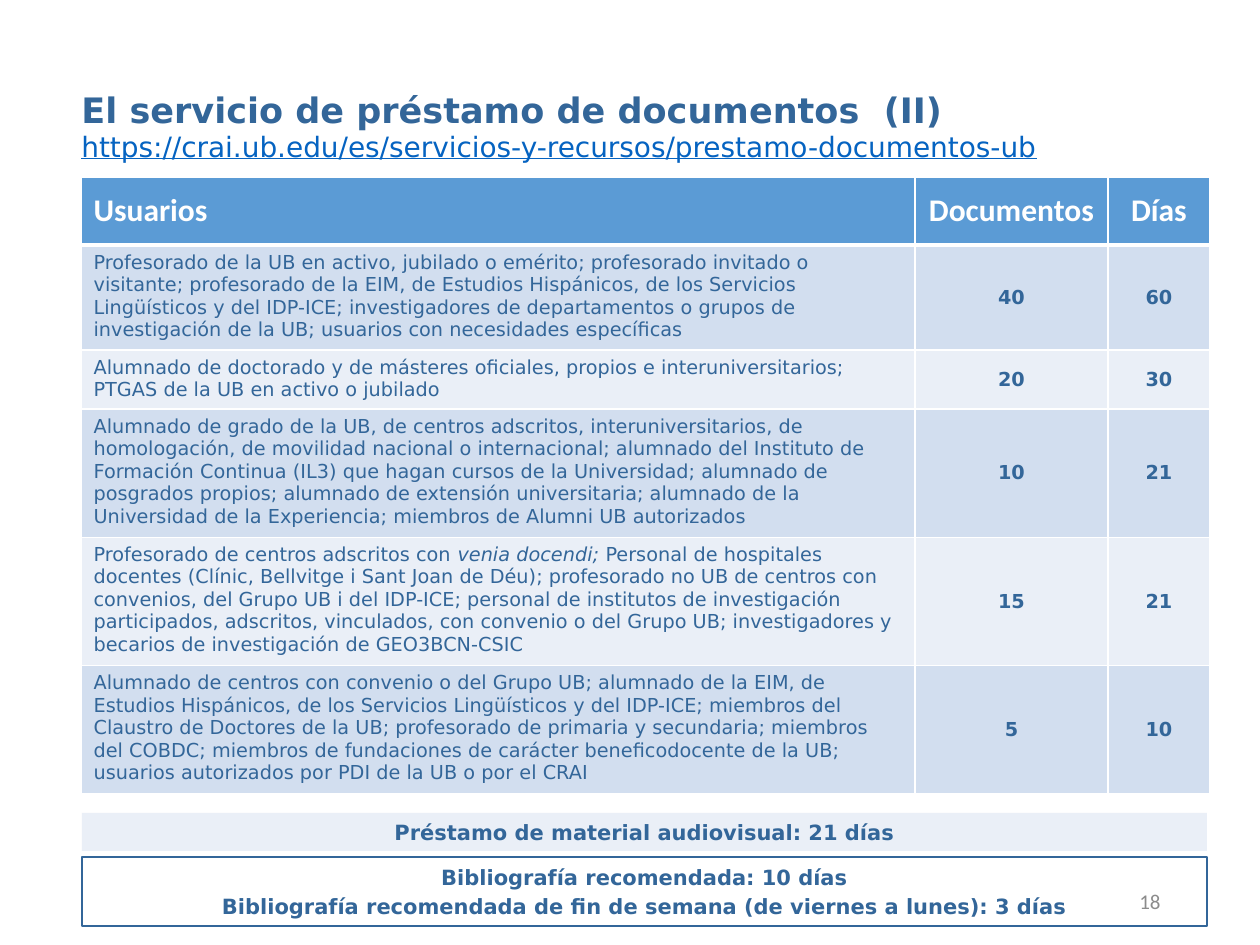
"""Build the slide on document loan periods for each group of library users."""
import lxml.etree
import pptx
import pptx.dml.color
import pptx.enum.shapes
import pptx.enum.text
import pptx.oxml
import pptx.oxml.ns
import pptx.util

PX = 914400 / 126
ALIGN = pptx.enum.text.PP_ALIGN
MIDDLE = pptx.enum.text.MSO_ANCHOR.MIDDLE
TOP = pptx.enum.text.MSO_ANCHOR.TOP
THEME = {
    "body_font": "DejaVu Sans", "table_head_font": "Calibri",
    "blue": "336699", "link": "0563C1", "gray": "8C8C8C", "white": "FFFFFF",
    "head": "5B9BD5", "bands": ("D2DEEF", "EAEFF7"), "notice": "EAEFF7",
    "title_pt": 20, "link_pt": 16, "head_pt": 18, "cell_pt": 11, "notice_pt": 12, "number_pt": 12,
}


def px(*lengths):
    return [pptx.util.Emu(round(length * PX)) for length in lengths]


def write(paragraph, text, size, color="blue", font="body_font", bold=False, align=ALIGN.LEFT):
    paragraph.alignment = align
    run = paragraph.add_run()
    run.text = text
    run.font.name = THEME[font]
    run.font.size = pptx.util.Pt(THEME[size])
    run.font.bold = bold
    run.font.color.rgb = pptx.dml.color.RGBColor.from_string(THEME[color])
    return run


deck = pptx.Presentation()
deck.slide_width, deck.slide_height = px(1260, 945)
slide = deck.slides.add_slide(deck.slide_layouts[6])

page_number = slide.shapes.add_textbox(*px(890, 876, 283, 50)).text_frame
page_number.word_wrap = True
page_number.vertical_anchor = MIDDLE
write(page_number.paragraphs[0], "18", "number_pt", "gray", "table_head_font", align=ALIGN.RIGHT)

title = slide.shapes.add_textbox(*px(69, 87, 926, 50)).text_frame
title.word_wrap = True
title.vertical_anchor = MIDDLE
title.paragraphs[0].line_spacing = 0.9
write(title.paragraphs[0], "El servicio de préstamo de documentos  (II)", "title_pt", bold=True)

address = slide.shapes.add_textbox(*px(69, 123, 1019, 81)).text_frame
address.word_wrap = False
write(address.paragraphs[0], "https://crai.ub.edu/es/servicios-y-recursos/prestamo-documentos-ub",
      "link_pt", "link").font.underline = True

headings = ("Usuarios", "Documentos", "Días")
loans = [
    (["Profesorado de la UB en activo, jubilado o emérito; profesorado invitado o visitante; "
      "profesorado de la EIM, de Estudios Hispánicos, de los Servicios Lingüísticos y del IDP-ICE; "
      "investigadores de departamentos o grupos de investigación de la UB; "
      "usuarios con necesidades específicas"], "40", "60"),
    (["Alumnado de doctorado y de másteres oficiales, propios e interuniversitarios; "
      "PTGAS de la UB en activo o jubilado"], "20", "30"),
    (["Alumnado de grado de la UB, de centros adscritos, interuniversitarios, de homologación, "
      "de movilidad nacional o internacional; alumnado del Instituto de Formación Continua (IL3) "
      "que hagan cursos de la Universidad; alumnado de posgrados propios; alumnado de extensión "
      "universitaria; alumnado de la Universidad de la Experiencia; "
      "miembros de Alumni UB autorizados"], "10", "21"),
    (["Profesorado de centros adscritos con ", "venia docendi; ",
      "Personal de hospitales docentes (Clínic, Bellvitge i Sant Joan de Déu); profesorado no UB "
      "de centros con convenios, del Grupo UB i del IDP-ICE; personal de institutos de "
      "investigación participados, adscritos, vinculados, con convenio o del Grupo UB; "
      "investigadores y becarios de investigación de GEO3BCN-CSIC"], "15", "21"),
    (["Alumnado de centros con convenio o del Grupo UB; alumnado de la EIM, de Estudios "
      "Hispánicos, de los Servicios Lingüísticos y del IDP-ICE; miembros del Claustro de Doctores "
      "de la UB; profesorado de primaria y secundaria; miembros del COBDC; miembros de fundaciones "
      "de carácter beneficodocente de la UB; usuarios autorizados por PDI de la UB o por el CRAI"],
     "5", "10"),
]
column_widths = px(834, 193, 102)
row_heights = px(68, 105, 59, 128, 128, 128)
loan_table = slide.shapes.add_table(len(row_heights), len(column_widths), *px(81, 177, 1129, 616)).table
for column, width in zip(loan_table.columns, column_widths):
    column.width = width
for row, height in zip(loan_table.rows, row_heights):
    row.height = height

for column_index, heading in enumerate(headings):
    write(loan_table.cell(0, column_index).text_frame.paragraphs[0], heading, "head_pt", "white",
          "table_head_font", True, ALIGN.CENTER if column_index else ALIGN.LEFT)
for row_index, (users, *limits) in enumerate(loans, 1):
    for part_index, part in enumerate(users):
        user_run = write(loan_table.cell(row_index, 0).text_frame.paragraphs[0], part, "cell_pt")
        user_run.font.italic = part_index == 1
    for column_index, limit in enumerate(limits, 1):
        write(loan_table.cell(row_index, column_index).text_frame.paragraphs[0], limit, "cell_pt",
              bold=True, align=ALIGN.CENTER)

for row_index, row in enumerate(loan_table.rows):
    row_color = THEME["bands"][(row_index - 1) % 2] if row_index else THEME["head"]
    for column_index, cell in enumerate(row.cells):
        cell.vertical_anchor = TOP if row_index and column_index == 0 else MIDDLE
        properties = cell._tc.get_or_add_tcPr()
        for side in ("lnL", "lnR", "lnT", "lnB"):
            under_head = (row_index, side) in ((0, "lnB"), (1, "lnT"))
            border = lxml.etree.SubElement(properties, pptx.oxml.ns.qn(f"a:{side}"),
                                           w=str(pptx.util.Pt(3 if under_head else 1)))
            border_fill = lxml.etree.SubElement(border, pptx.oxml.ns.qn("a:solidFill"))
            lxml.etree.SubElement(border_fill, pptx.oxml.ns.qn("a:srgbClr"), val=THEME["white"])
        cell.fill.solid()
        cell.fill.fore_color.rgb = pptx.dml.color.RGBColor.from_string(row_color)

notices = [
    (813, 38, True, ["Préstamo de material audiovisual: 21 días"]),
    (857, 69, False, ["Bibliografía recomendada: 10 días",
                      "Bibliografía recomendada de fin de semana (de viernes a lunes): 3 días"]),
]
for top, height, filled, lines in notices:
    notice = slide.shapes.add_shape(pptx.enum.shapes.MSO_SHAPE.RECTANGLE, *px(82, top, 1125, height))
    notice.shadow.inherit = False
    if filled:
        notice.fill.solid()
        notice.fill.fore_color.rgb = pptx.dml.color.RGBColor.from_string(THEME["notice"])
        notice.line.fill.background()
    else:
        notice.fill.background()
        notice.line.color.rgb = pptx.dml.color.RGBColor.from_string(THEME["blue"])
        notice.line.width = pptx.util.Pt(0.75)
    notice.text_frame.word_wrap = True
    notice.text_frame.vertical_anchor = MIDDLE
    for line_index, line in enumerate(lines):
        paragraph = notice.text_frame.add_paragraph() if line_index else notice.text_frame.paragraphs[0]
        if line_index:
            paragraph.space_before = pptx.util.Pt(2.6)
        write(paragraph, line, "notice_pt", bold=True, align=ALIGN.CENTER)

deck.save("out.pptx")
